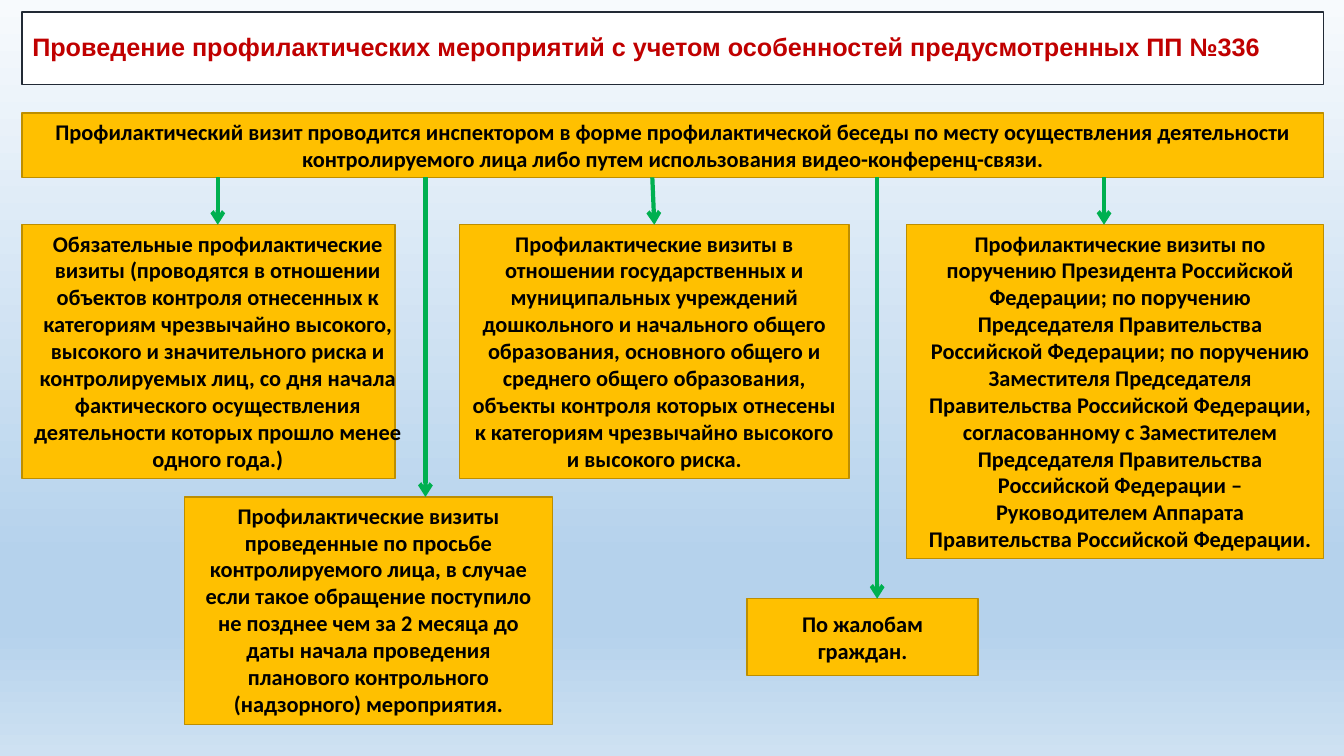
from lxml import etree
from pptx import Presentation
from pptx.dml.color import RGBColor
from pptx.enum import shapes, text
from pptx.oxml.ns import qn
from pptx.util import Inches, Pt

AMBER = RGBColor(0xFF, 0xC0, 0x00)
AMBER_EDGE = RGBColor(0xBD, 0x8E, 0x00)
GREEN = RGBColor(0x00, 0xB0, 0x50)
RED = RGBColor(0xC0, 0x00, 0x00)
NAVY = RGBColor(0x22, 0x2A, 0x35)
WHITE = RGBColor(0xFF, 0xFF, 0xFF)
BLACK = RGBColor(0x00, 0x00, 0x00)
BACKGROUND_STOPS = [(0, "F7FAFD"), (74, "B5D2EC"), (83, "B5D2EC"), (100, "CEE1F2")]

LEFT, WIDTH = 0.22, 12.91
HEADER_TOP, HEADER_HEIGHT = 1.12, 0.64
HEADER_BOTTOM = HEADER_TOP + HEADER_HEIGHT
ROW_TOP, LOWER_TOP, COMPLAINTS_TOP = 2.23, 4.93, 5.94


def add_amber_box(left, top, width, height):
    box = page.shapes.add_shape(shapes.MSO_SHAPE.RECTANGLE, Inches(left),
                                Inches(top), Inches(width), Inches(height))
    box.shadow.inherit = False
    box.fill.solid()
    box.fill.fore_color.rgb = AMBER
    box.line.color.rgb = AMBER_EDGE
    box.line.width = Pt(1)
    return box


def write(box, words, anchor=text.MSO_ANCHOR.TOP):
    frame = box.text_frame
    frame.word_wrap = True
    frame.vertical_anchor = anchor
    para = frame.paragraphs[0]
    para.text = words
    para.alignment = text.PP_ALIGN.CENTER
    para.font.name = "Calibri"
    para.font.size = Pt(16)
    para.font.bold = True
    para.font.color.rgb = BLACK


deck = Presentation()
deck.slide_width, deck.slide_height = Inches(13.33), Inches(7.5)
page = deck.slides.add_slide(deck.slide_layouts[5])

# Background gradient, light at the top
backdrop = page.background.fill
backdrop.gradient()
backdrop.gradient_angle = 270
stop_list = next(page.element.iter(qn("a:gsLst")))
for stop in list(stop_list):
    stop_list.remove(stop)
for percent, color in BACKGROUND_STOPS:
    stop = etree.SubElement(stop_list, qn("a:gs"), pos=str(percent * 1000))
    etree.SubElement(stop, qn("a:srgbClr"), val=color)

# Title
title = page.shapes.title
title.left, title.top = Inches(LEFT), Inches(0.12)
title.width, title.height = Inches(WIDTH), Inches(0.72)
title.fill.solid()
title.fill.fore_color.rgb = WHITE
title.line.color.rgb = NAVY
title.line.width = Pt(1)
title.text_frame.auto_size = text.MSO_AUTO_SIZE.NONE
title.text_frame.vertical_anchor = text.MSO_ANCHOR.MIDDLE
para = title.text_frame.paragraphs[0]
para.text = "Проведение профилактических мероприятий с учетом особенностей предусмотренных ПП №336"
para.alignment = text.PP_ALIGN.LEFT
para.line_spacing = 0.9
para.font.name = "Arial"
para.font.size = Pt(18)
para.font.bold = True
para.font.color.rgb = RED

# Header and complaints boxes
header = add_amber_box(LEFT, HEADER_TOP, WIDTH, HEADER_HEIGHT)
write(header, "Профилактический визит проводится инспектором в форме профилактической беседы "
      "по месту осуществления деятельности контролируемого лица либо путем использования "
      "видео-конференц-связи.")
complaints = add_amber_box(7.41, COMPLAINTS_TOP, 2.29, 0.76)
write(complaints, "По жалобам граждан.", text.MSO_ANCHOR.MIDDLE)

# Kinds of visit: left, top, width, height, text left, text width, words
visits = [
    (LEFT, ROW_TOP, 3.7, 2.52, LEFT, 3.88,
     "Обязательные профилактические визиты (проводятся в отношении объектов контроля "
     "отнесенных к категориям чрезвычайно высокого, высокого и значительного риска и "
     "контролируемых лиц, со дня начала фактического осуществления деятельности которых "
     "прошло менее одного года.)"),
    (4.56, ROW_TOP, 3.86, 2.52, 4.56, 3.86,
     "Профилактические визиты в отношении государственных и муниципальных учреждений "
     "дошкольного и начального общего образования, основного общего и среднего общего "
     "образования, объекты контроля которых отнесены к категориям чрезвычайно высокого "
     "и высокого риска."),
    (8.99, ROW_TOP, 4.14, 3.31, 9.09, 4.04,
     "Профилактические визиты по поручению Президента Российской Федерации; по поручению "
     "Председателя Правительства Российской Федерации; по поручению Заместителя "
     "Председателя Правительства Российской Федерации, согласованному с Заместителем "
     "Председателя Правительства Российской Федерации – Руководителем Аппарата "
     "Правительства Российской Федерации."),
    (1.83, LOWER_TOP, 3.65, 2.26, 1.83, 3.65,
     "Профилактические визиты проведенные по просьбе контролируемого лица, в случае если "
     "такое обращение поступило не позднее чем за 2 месяца до даты начала проведения "
     "планового контрольного (надзорного) мероприятия."),
]
captions = []
for left, top, width, height, text_left, text_width, words in visits:
    add_amber_box(left, top, width, height)
    caption = page.shapes.add_textbox(Inches(text_left), Inches(top),
                                      Inches(text_width), Inches(height))
    write(caption, words)
    captions.append(caption)
mandatory, institutions, by_order, on_request = captions

# Arrows from the header: start x, end x, end y, box joined at its top middle
arrows = [
    (4.22, 4.22, LOWER_TOP, None),
    (2.16, 2.16, ROW_TOP, mandatory),
    (6.47, 6.49, ROW_TOP, institutions),
    (8.7, 8.7, COMPLAINTS_TOP, None),
    (10.95, 10.95, ROW_TOP, None),
]
for start_x, end_x, end_y, target in arrows:
    arrow = page.shapes.add_connector(shapes.MSO_CONNECTOR.STRAIGHT, Inches(start_x),
                                      Inches(HEADER_BOTTOM), Inches(end_x), Inches(end_y))
    if target is not None:
        arrow.end_connect(target, 0)
    arrow.line.color.rgb = GREEN
    arrow.line.width = Pt(3)
    etree.SubElement(arrow.line._get_or_add_ln(), qn("a:tailEnd"), type="arrow")
    etree.SubElement(arrow.element.spPr, qn("a:effectLst"))

deck.save("out.pptx")
